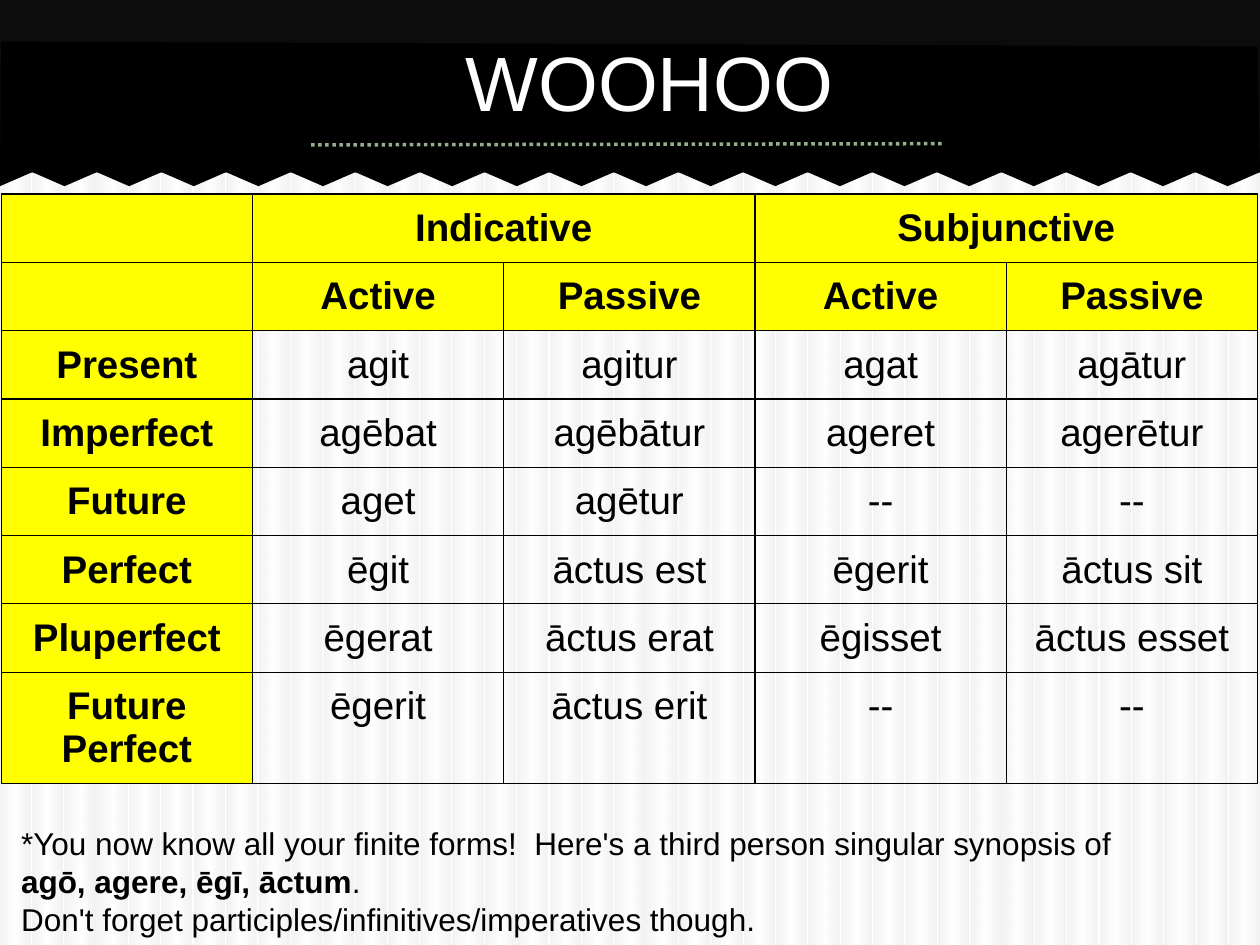
import lxml.etree
import pptx
import pptx.dml.color
import pptx.enum.dml
import pptx.enum.shapes
import pptx.enum.text
import pptx.oxml
import pptx.oxml.ns
import pptx.util

Pt = pptx.util.Pt
RGBColor = pptx.dml.color.RGBColor
Align = pptx.enum.text.PP_ALIGN
Anchor = pptx.enum.text.MSO_ANCHOR
qn = pptx.oxml.ns.qn
NAMESPACE = pptx.oxml.ns.nsdecls("a")

BLACK = RGBColor(0x00, 0x00, 0x00)
WHITE = RGBColor(0xFF, 0xFF, 0xFF)
BAND = RGBColor(0x0C, 0x0C, 0x0C)
YELLOW = RGBColor(0xFF, 0xFF, 0x00)
SAGE = RGBColor(0x94, 0xAE, 0x8E)
STRIPE_EDGE = RGBColor(0xBF, 0xBF, 0xBF)

WIDTH, HEIGHT = 720, 540
TEETH = 39

FORMS = [
    ["", "Indicative", "", "Subjunctive", ""],
    ["", "Active", "Passive", "Active", "Passive"],
    ["Present", "agit", "agitur", "agat", "agātur"],
    ["Imperfect", "agēbat", "agēbātur", "ageret", "agerētur"],
    ["Future", "aget", "agētur", "--", "--"],
    ["Perfect", "ēgit", "āctus est", "ēgerit", "āctus sit"],
    ["Pluperfect", "ēgerat", "āctus erat", "ēgisset", "āctus esset"],
    ["Future Perfect", "ēgerit", "āctus erit", "--", "--"],
]
NOTE = [
    [("*You now know all your finite forms!  Here's a third person singular synopsis of ", False),
     ("agō, agere, ēgī, āctum", True), (".", False)],
    [("Don't forget participles/infinitives/imperatives though.", False)],
]


class SlideBuilder:
    font = "Arial"
    inset = Pt(7.2)

    def __init__(self, page):
        self.page = page
        self.shapes = page.shapes

    def format_paragraph(self, para, size, color, align, bold=False):
        para.alignment = align
        para.font.name = self.font
        para.font.size = Pt(size)
        para.font.color.rgb = color
        para.font.bold = bold

    def set_insets(self, holder):
        holder.margin_left = holder.margin_right = self.inset
        holder.margin_top = holder.margin_bottom = self.inset

    def paint(self, shape, color):
        shape.shadow.inherit = False
        shape.fill.solid()
        shape.fill.fore_color.rgb = color
        shape.line.fill.background()

    def rectangle(self, left, top, width, height, color):
        shape = self.shapes.add_shape(pptx.enum.shapes.MSO_SHAPE.RECTANGLE,
                                      Pt(left), Pt(top), Pt(width), Pt(height))
        self.paint(shape, color)
        return shape

    def stripe(self, left, top, width, height):
        shape = self.rectangle(left, top, width, height, WHITE)
        stops = "".join(
            f'<a:gs pos="{position * 1000}"><a:srgbClr val="{color}">'
            '<a:alpha val="19000"/></a:srgbClr></a:gs>'
            for position, color in [(0, STRIPE_EDGE), (50, WHITE),
                                    (97, STRIPE_EDGE), (100, STRIPE_EDGE)])
        gradient = pptx.oxml.parse_xml(
            f'<a:gradFill {NAMESPACE} rotWithShape="1"><a:gsLst>{stops}</a:gsLst>'
            '<a:lin ang="0" scaled="0"/></a:gradFill>')
        properties = shape.element.spPr
        properties.replace(properties.find(qn("a:solidFill")), gradient)

    def outline(self, points, color):
        start, *rest = [(Pt(x), Pt(y)) for x, y in points]
        builder = self.shapes.build_freeform(*start, scale=1.0)
        builder.add_line_segments(rest, close=True)
        self.paint(builder.convert_to_shape(), color)

    def dotted_line(self, x1, y1, x2, y2, color, width):
        line = self.shapes.add_connector(pptx.enum.shapes.MSO_CONNECTOR.STRAIGHT,
                                         Pt(x1), Pt(y1), Pt(x2), Pt(y2))
        line.line.color.rgb = color
        line.line.width = Pt(width)
        line.line.dash_style = pptx.enum.dml.MSO_LINE.ROUND_DOT
        lxml.etree.SubElement(line.element.spPr, qn("a:effectLst"))

    def title(self, text, left, top, width, height, indent):
        box = self.shapes.title
        self.shapes.element.append(box.element)  # in front of the banner
        box.left, box.top, box.width, box.height = map(Pt, (left, top, width, height))
        frame = box.text_frame
        frame.text = text
        frame.auto_size = pptx.enum.text.MSO_AUTO_SIZE.NONE
        frame.vertical_anchor = Anchor.MIDDLE
        self.set_insets(frame)
        para = frame.paragraphs[0]
        self.format_paragraph(para, 44, WHITE, Align.CENTER)
        properties = para._p.get_or_add_pPr()
        properties.set("marL", "0")
        properties.set("indent", str(Pt(indent)))

    def cell(self, cell, text, heading):
        cell.text = text
        self.set_insets(cell)
        cell.vertical_anchor = Anchor.TOP
        self.format_paragraph(cell.text_frame.paragraphs[0], 22, BLACK, Align.CENTER, heading)
        if heading:
            cell.fill.solid()
            cell.fill.fore_color.rgb = YELLOW
        else:
            cell.fill.background()
        properties = cell._tc.get_or_add_tcPr()
        for index, side in enumerate("LRTB"):
            properties.insert(index, pptx.oxml.parse_xml(
                f'<a:ln{side} {NAMESPACE} w="{Pt(0.75)}"><a:solidFill>'
                f'<a:srgbClr val="{BLACK}"/></a:solidFill></a:ln{side}>'))

    def table(self, rows, left, top, width, height, row_height):
        graphic = self.shapes.add_table(len(rows), len(rows[0]),
                                        Pt(left), Pt(top), Pt(width), Pt(height))
        grid = graphic.table
        grid.first_row = grid.horz_banding = False
        for row_index, row in enumerate(rows):
            grid.rows[row_index].height = Pt(row_height)
            for column, text in enumerate(row):
                self.cell(grid.cell(row_index, column), text, row_index < 2 or column == 0)
        for column in (1, 3):
            grid.cell(0, column).merge(grid.cell(0, column + 1))
        graphic.height = Pt(height)

    def text(self, paragraphs, left, top, width, height):
        box = self.shapes.add_textbox(Pt(left), Pt(top), Pt(width), Pt(height))
        frame = box.text_frame
        frame.word_wrap = True
        self.set_insets(frame)
        for index, spans in enumerate(paragraphs):
            para = frame.add_paragraph() if index else frame.paragraphs[0]
            self.format_paragraph(para, 18, BLACK, Align.LEFT)
            for words, bold in spans:
                span = para.add_run()
                span.text = words
                span.font.bold = bold


def main():
    deck = pptx.Presentation()
    deck.slide_width, deck.slide_height = Pt(WIDTH), Pt(HEIGHT)
    page = deck.slides.add_slide(deck.slide_layouts[5])
    page.background.fill.solid()
    page.background.fill.fore_color.rgb = WHITE
    builder = SlideBuilder(page)

    # Striped backdrop
    for index in range(TEETH):
        builder.stripe(index * 18.49, 0.72, 17.28, HEIGHT - 0.72)

    # Banner with a zigzag lower edge
    builder.rectangle(0, 0, WIDTH, 98.6, BAND)
    zigzag = [(index * WIDTH / TEETH, 98.4 if index % 2 else 106.4)
              for index in range(TEETH, -1, -1)]
    builder.outline([(0.7, 23.8), (718.6, 26.6)] + zigzag, BLACK)
    builder.dotted_line(177.8, 82.8, 540, 82.1, SAGE, 2)
    builder.title("WOOHOO", 36, 1.4, 648, 90, indent=22.5)

    # Verb forms and closing note
    builder.table(FORMS, 0.7, 110.9, 718, 352.8, row_height=30.2)
    builder.text(NOTE, 5, 463.7, 679, 67.7)

    deck.save("out.pptx")


if __name__ == "__main__":
    main()
